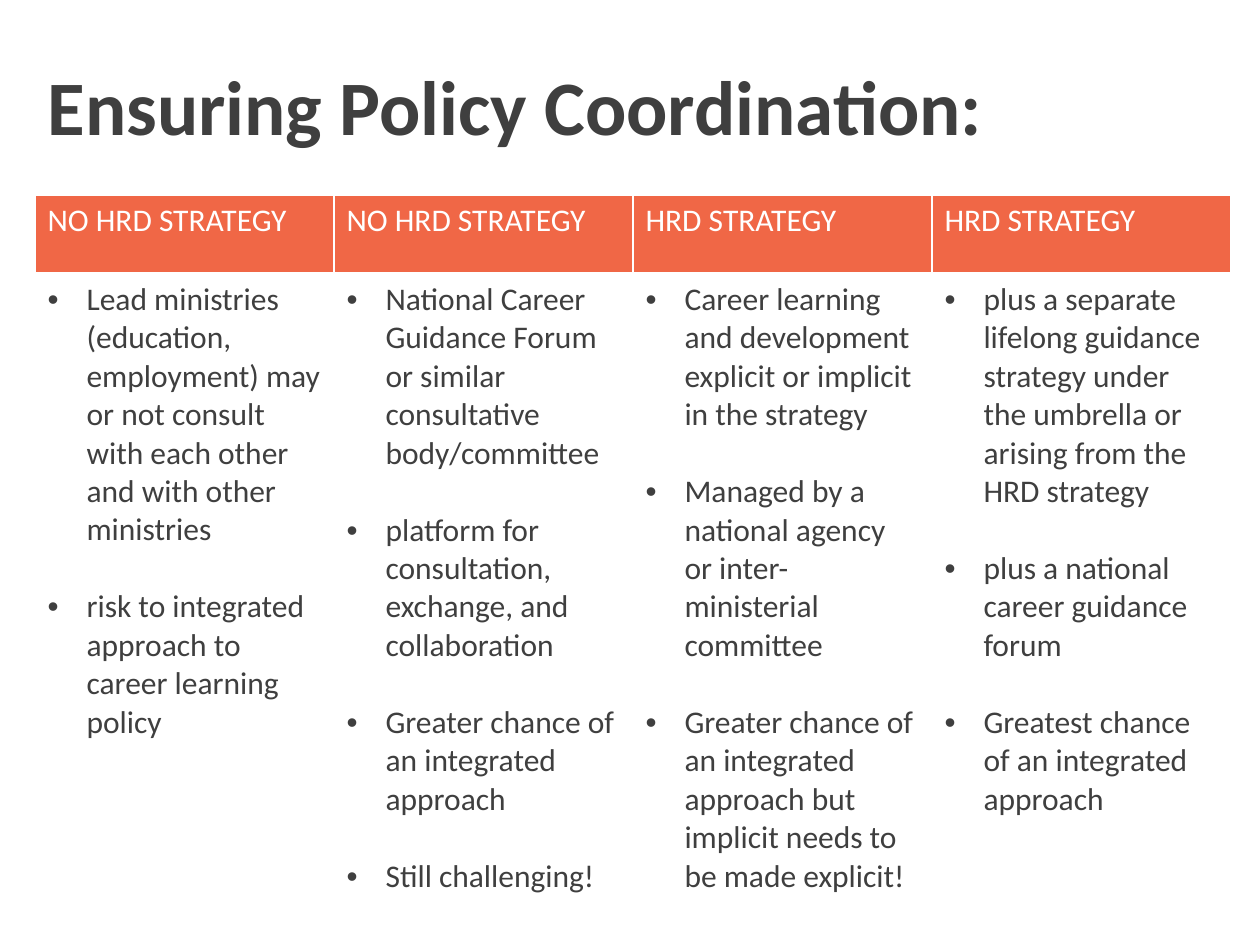
from lxml.etree import SubElement
from pptx import Presentation
from pptx.dml.color import RGBColor
from pptx.enum.text import MSO_ANCHOR, PP_ALIGN
from pptx.oxml.ns import qn
from pptx.util import Pt

PX = 914400 // 126
COLORS = {"text": "3F3F3F", "header": "F06746", "white": "FFFFFF"}
FONT = "Calibri"
INDENT = 39 * PX
LINE_PITCH = Pt(22)

STRATEGIES = [
    ("NO HRD STRATEGY", [
        "Lead ministries (education, employment) may or not consult with each other "
        "and with other ministries",
        "risk to integrated approach to career learning policy",
    ]),
    ("NO HRD STRATEGY", [
        "National Career Guidance Forum or similar consultative body/committee",
        "platform for consultation, exchange, and collaboration",
        "Greater chance of an integrated approach",
        "Still challenging!",
    ]),
    ("HRD STRATEGY", [
        "Career learning and development explicit or implicit in the strategy",
        "Managed by a national agency or inter-ministerial committee",
        "Greater chance of an integrated approach but implicit needs to be made explicit!",
    ]),
    ("HRD STRATEGY", [
        "plus a separate lifelong guidance strategy under the umbrella or arising "
        "from the HRD strategy",
        "plus a national career guidance forum",
        "Greatest chance of an integrated approach",
    ]),
]


def set_font(paragraph, size, color, bold=False):
    font = paragraph.font
    font.name, font.size, font.bold = FONT, Pt(size), bold
    font.color.rgb = RGBColor.from_string(COLORS[color])


def style_cell(cell, fill, bottom_width):
    """Give the cell its fill and white borders, 1 pt except at the bottom."""
    properties = cell._tc.get_or_add_tcPr()
    for side in ("lnL", "lnR", "lnT", "lnB"):
        width = bottom_width if side == "lnB" else 1
        line = SubElement(properties, qn(f"a:{side}"), w=str(Pt(width)))
        line_fill = SubElement(line, qn("a:solidFill"))
        SubElement(line_fill, qn("a:srgbClr"), val=COLORS["white"])
    cell.fill.solid()
    cell.fill.fore_color.rgb = RGBColor.from_string(COLORS[fill])


prs = Presentation()
prs.slide_width, prs.slide_height = 1260 * PX, 945 * PX
slide = prs.slides.add_slide(prs.slide_layouts[5])

title = slide.shapes.title
title.left, title.top, title.width, title.height = 35 * PX, 26 * PX, 1134 * PX, 158 * PX
title.text_frame.text = "Ensuring Policy Coordination:"
title.text_frame.vertical_anchor = MSO_ANCHOR.MIDDLE
heading = title.text_frame.paragraphs[0]
heading.alignment = PP_ALIGN.LEFT
set_font(heading, 44, "text", bold=True)

table = slide.shapes.add_table(
    2, len(STRATEGIES), 35 * PX, 195 * PX, 1196 * PX, 720 * PX).table
table.horz_banding = False
table.rows[0].height, table.rows[1].height = 79 * PX, 641 * PX

for column, (strategy, points) in enumerate(STRATEGIES):
    table.columns[column].width = 299 * PX
    header, body = table.cell(0, column), table.cell(1, column)
    style_cell(header, "header", 3)
    style_cell(body, "white", 1)

    header.text = strategy
    set_font(header.text_frame.paragraphs[0], 18, "white")

    body.text = "\n".join(points)
    for index, point in enumerate(body.text_frame.paragraphs):
        set_font(point, 18, "text")
        if index:
            point.space_before = LINE_PITCH
        layout = point._p.get_or_add_pPr()
        layout.set("marL", str(INDENT))
        layout.set("indent", str(-INDENT))
        bullet_font = layout.makeelement(qn("a:buFont"), {"typeface": "Arial"})
        bullet = layout.makeelement(qn("a:buChar"), {"char": "•"})
        run_defaults = layout.find(qn("a:defRPr"))
        run_defaults.addprevious(bullet_font)
        run_defaults.addprevious(bullet)

prs.save("out.pptx")
